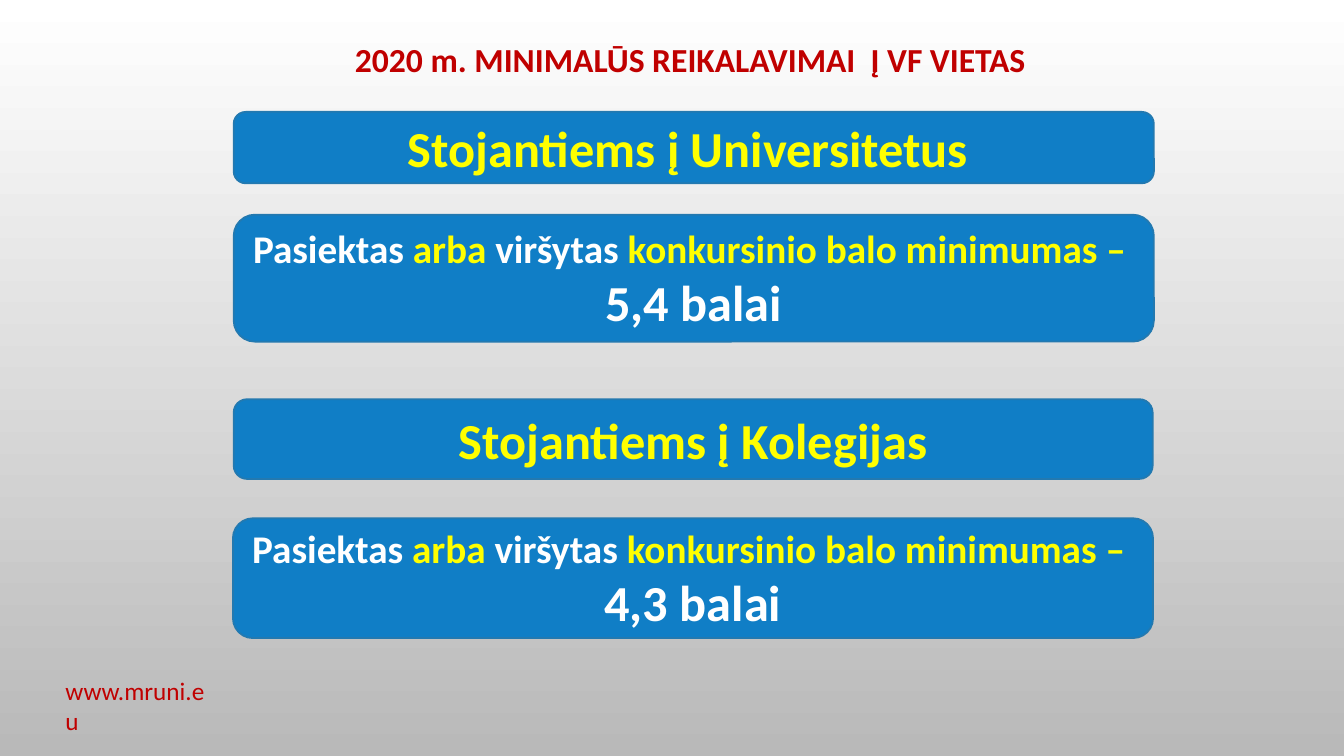
import dataclasses

import pptx
import pptx.dml.color
import pptx.enum.shapes
import pptx.enum.text
import pptx.shapes.autoshape
import pptx.slide
import pptx.text.text
import pptx.util

Cm = pptx.util.Cm
Pt = pptx.util.Pt

COLORS = {
    "white": "FFFFFF",
    "gray": "B9B9B9",
    "blue": "107EC6",
    "edge": "2379B0",
    "yellow": "FFFF00",
    "red": "C00000",
}


@dataclasses.dataclass(frozen=True)
class Line:
    size: int
    runs: tuple[tuple[str, str], ...]
    bold: bool = True


@dataclasses.dataclass(frozen=True)
class Box:
    left: float
    top: float
    width: float
    height: float
    lines: tuple[Line, ...]
    centered: bool = True


def rgb(name: str) -> pptx.dml.color.RGBColor:
    return pptx.dml.color.RGBColor.from_string(COLORS[name])


def heading(text: str) -> tuple[Line, ...]:
    return (Line(36, ((text, "yellow"),)),)


def minimum(score: str) -> tuple[Line, ...]:
    return (
        Line(28, (
            ("Pasiektas", "white"),
            (" arba ", "yellow"),
            ("viršytas", "white"),
            (" konkursinio balo minimumas – ", "yellow"),
        )),
        Line(36, ((score, "white"),)),
    )


PANELS = (
    Box(5.89, 2.82, 23.19, 1.8, heading("Stojantiems į Universitetus ")),
    Box(5.89, 5.41, 23.19, 3.2, minimum("5,4 balai")),
    Box(5.89, 10.06, 23.16, 2.01, heading("Stojantiems į Kolegijas")),
    Box(5.87, 13.06, 23.19, 3.02, minimum("4,3 balai")),
)
LABELS = (
    Box(1.4, 16.89, 4.01, 1.02,
        (Line(18, (("www.mruni.eu", "red"),), bold=False),), centered=False),
    Box(5.72, 0.86, 23.55, 1.27,
        (Line(24, (("2020 m. MINIMALŪS REIKALAVIMAI  Į VF VIETAS ", "red"),)),)),
)


def write_lines(tf: pptx.text.text.TextFrame, box: Box) -> None:
    align = pptx.enum.text.PP_ALIGN
    tf.word_wrap = True
    for i, line in enumerate(box.lines):
        p = tf.add_paragraph() if i else tf.paragraphs[0]
        p.alignment = align.CENTER if box.centered else align.LEFT
        p.font.name = "Calibri"
        p.font.size = Pt(line.size)
        p.font.bold = line.bold
        for text, color in line.runs:
            r = p.add_run()
            r.text = text
            r.font.color.rgb = rgb(color)


def add_panel(s: pptx.slide.Slide, box: Box) -> None:
    sp = s.shapes.add_shape(
        pptx.enum.shapes.MSO_SHAPE.ROUNDED_RECTANGLE,
        Cm(box.left), Cm(box.top), Cm(box.width), Cm(box.height))
    sp.shadow.inherit = False
    sp.fill.solid()
    sp.fill.fore_color.rgb = rgb("blue")
    sp.line.color.rgb = rgb("edge")
    sp.line.width = Pt(1.25)
    sp.text_frame.vertical_anchor = pptx.enum.text.MSO_ANCHOR.MIDDLE
    write_lines(sp.text_frame, box)


def add_label(s: pptx.slide.Slide, box: Box) -> None:
    sp = s.shapes.add_textbox(
        Cm(box.left), Cm(box.top), Cm(box.width), Cm(box.height))
    sp.text_frame.auto_size = pptx.enum.text.MSO_AUTO_SIZE.SHAPE_TO_FIT_TEXT
    write_lines(sp.text_frame, box)


def paint_background(s: pptx.slide.Slide) -> None:
    fill = s.background.fill
    fill.gradient()
    fill.gradient_angle = 270
    for stop, color in zip(fill.gradient_stops, ("white", "gray")):
        stop.color.rgb = rgb(color)


def main() -> None:
    prs = pptx.Presentation()
    prs.slide_width = Cm(33.87)
    prs.slide_height = Cm(19.05)
    s = prs.slides.add_slide(prs.slide_layouts[6])
    paint_background(s)
    for box in PANELS:
        add_panel(s, box)
    for box in LABELS:
        add_label(s, box)
    prs.save("out.pptx")


if __name__ == "__main__":
    main()
